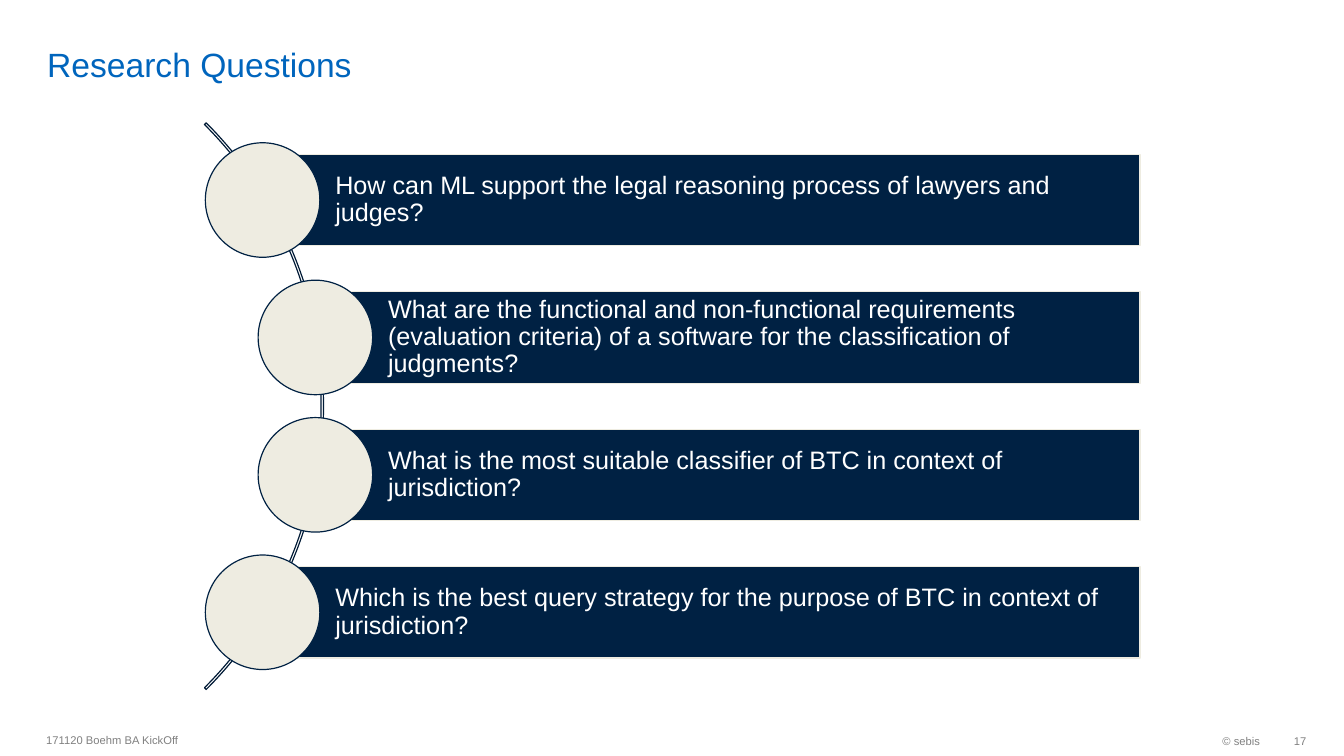
from typing import NamedTuple

from pptx import Presentation
from pptx import util as u
from pptx.dml.color import RGBColor
from pptx.enum import shapes, text

NAVY, DARK_NAVY, CREAM = "002143", "001A36", "EEECE1"
WHITE, BLUE, GREY = "FFFFFF", "0065BD", "808080"
LINE_WIDTH = 0.85
FIRST_CENTRE, ROW_PITCH = 142.9, 98.15
BAR_RIGHT, BAR_HEIGHT, CIRCLE_SIZE = 814.3, 65.4, 81.8
ARC_CENTRE_X, ARC_SIZE = -55.1, 572.4


class Box(NamedTuple):
    left: float
    top: float
    width: float
    height: float


class Question(NamedTuple):
    wording: str
    bar_left: float


class Label(NamedTuple):
    wording: str
    box: Box
    size: float
    color: str
    align: text.PP_ALIGN = text.PP_ALIGN.LEFT
    anchor: text.MSO_ANCHOR = text.MSO_ANCHOR.MIDDLE
    insets: tuple = (7.2, 3.6, 7.2, 3.6)
    spacing: float = 1.0


QUESTIONS = [
    Question("How can ML support the legal reasoning process of lawyers and judges?", 187.6),
    Question("What are the functional and non-functional requirements (evaluation criteria) "
             "of a software for the classification of judgments?", 225.3),
    Question("What is the most suitable classifier of BTC in context of jurisdiction?", 225.3),
    Question("Which is the best query strategy for the purpose of BTC in context of "
             "jurisdiction?", 187.6),
]

LABELS = [
    Label("Research Questions", Box(26.6, 3.6, 833.8, 56.9), 24, BLUE,
          anchor=text.MSO_ANCHOR.BOTTOM, insets=(7.2, 0, 7.2, 0)),
    Label("© sebis", Box(738.7, 517.7, 168.5, 23), 8, GREY, text.PP_ALIGN.RIGHT),
    Label("171120 Boehm BA KickOff", Box(25.9, 517, 453.6, 23), 8, GREY),
    Label("17", Box(907.2, 517.7, 25.9, 23), 8, GREY, text.PP_ALIGN.RIGHT,
          insets=(7.2, 3.6, 0, 3.6)),
]


def rgb(value: str) -> RGBColor:
    return RGBColor.from_string(value)


def points(box: Box) -> list:
    return [u.Pt(length) for length in box]


def write(shape, label: Label) -> None:
    frame = shape.text_frame
    left, top, right, bottom = map(u.Pt, label.insets)
    frame_format = {
        "word_wrap": True, "vertical_anchor": label.anchor,
        "margin_left": left, "margin_top": top,
        "margin_right": right, "margin_bottom": bottom,
    }
    para = frame.paragraphs[0]
    span = para.add_run()
    span.text = label.wording
    para_format = {"alignment": label.align, "line_spacing": label.spacing}
    font_format = {"name": "Arial", "size": u.Pt(label.size)}
    for target, values in ((frame, frame_format), (para, para_format), (span.font, font_format)):
        for name, value in values.items():
            setattr(target, name, value)
    span.font.color.rgb = rgb(label.color)


def add_outlined(page, kind, box: Box, line: str, fill: str | None = None):
    """Add a preset shape with a thin outline; no fill colour leaves it open."""
    shape = page.shapes.add_shape(kind, *points(box))
    shape.shadow.inherit = False
    if fill:
        shape.fill.solid()
        shape.fill.fore_color.rgb = rgb(fill)
    else:
        shape.fill.background()
    shape.line.color.rgb = rgb(line)
    shape.line.width = u.Pt(LINE_WIDTH)
    return shape


def add_arc(page) -> None:
    middle = FIRST_CENTRE + ROW_PITCH * (len(QUESTIONS) - 1) / 2
    box = Box(ARC_CENTRE_X - ARC_SIZE / 2, middle - ARC_SIZE / 2, ARC_SIZE, ARC_SIZE)
    arc = add_outlined(page, shapes.MSO_SHAPE.BLOCK_ARC, box, DARK_NAVY)
    for index, value in enumerate((189, 27, 0.003)):
        arc.adjustments[index] = value


def add_question(page, question: Question, centre: float) -> None:
    """Add a bar and the circle centred on the bar's left edge."""
    left = question.bar_left
    bar_box = Box(left, centre - BAR_HEIGHT / 2, BAR_RIGHT - left, BAR_HEIGHT)
    bar = add_outlined(page, shapes.MSO_SHAPE.RECTANGLE, bar_box, CREAM, NAVY)
    write(bar, Label(question.wording, bar_box, 18, WHITE,
                     insets=(51.9, 3.6, 3.6, 3.6), spacing=0.9))
    radius = CIRCLE_SIZE / 2
    circle_box = Box(left - radius, centre - radius, CIRCLE_SIZE, CIRCLE_SIZE)
    add_outlined(page, shapes.MSO_SHAPE.OVAL, circle_box, NAVY, CREAM)


def main() -> None:
    deck = Presentation()
    deck.slide_width, deck.slide_height = u.Pt(960), u.Pt(540)
    page = deck.slides.add_slide(deck.slide_layouts[6])
    add_arc(page)
    for row, question in enumerate(QUESTIONS):
        add_question(page, question, FIRST_CENTRE + row * ROW_PITCH)
    for label in LABELS:
        write(page.shapes.add_textbox(*points(label.box)), label)
    deck.save("out.pptx")


if __name__ == "__main__":
    main()
